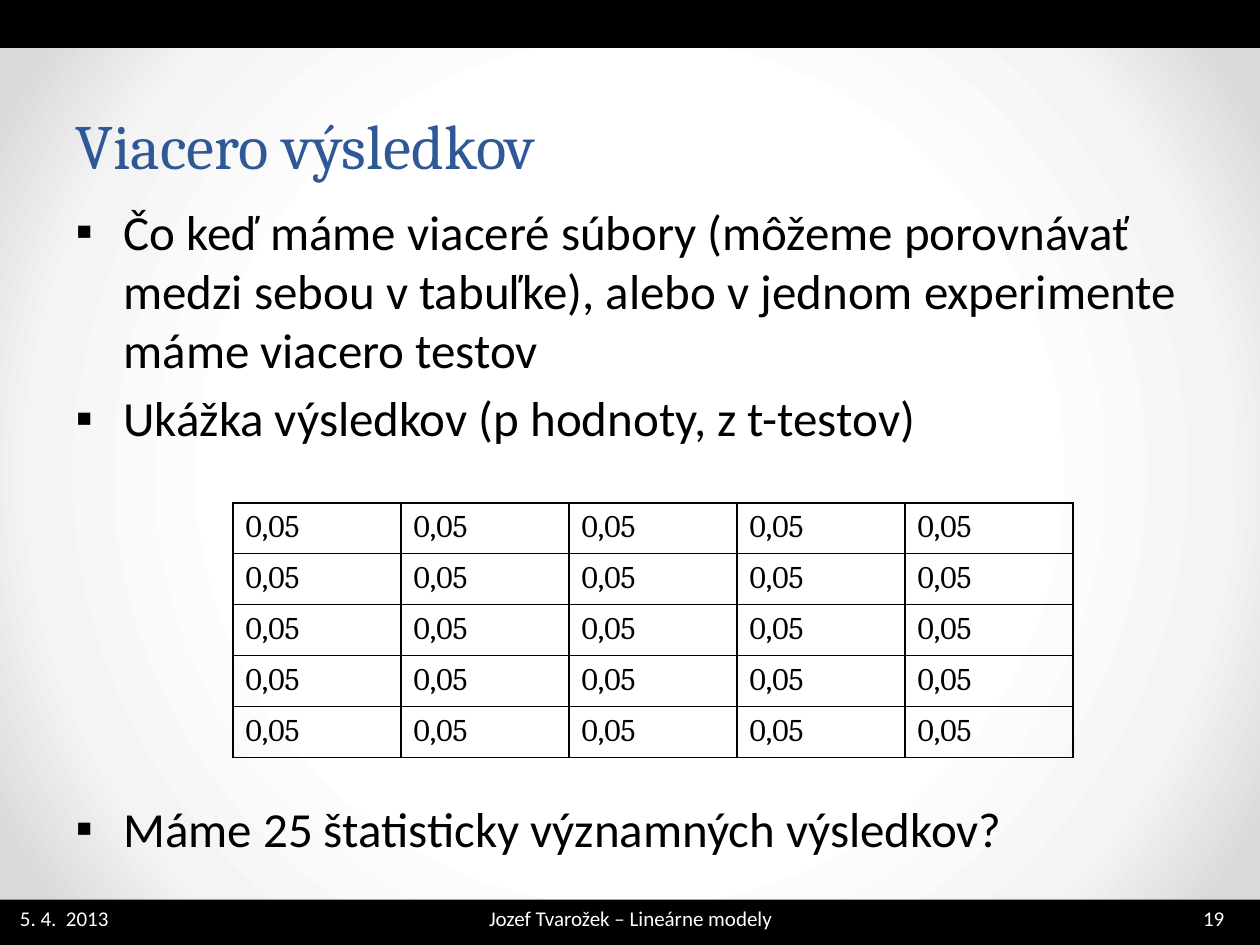
import pptx
import pptx.dml.color
import pptx.enum.text
import pptx.oxml
import pptx.oxml.ns
import pptx.util
from lxml import etree

Inches, Pt = pptx.util.Inches, pptx.util.Pt
ALIGN, ANCHOR = pptx.enum.text.PP_ALIGN, pptx.enum.text.MSO_ANCHOR
qn = pptx.oxml.ns.qn

WIDTH, HEIGHT = 10, 7.5
COLORS = {"black": "000000", "white": "FFFFFF", "title": "2F5897"}
BACKDROP = [(50, "FFFFFF"), (76, "F4F4F4"), (92, "DADADA")]
TITLE = "Viacero výsledkov"
BULLETS = [  # text, space before in points
    ("Čo keď máme viaceré súbory (môžeme porovnávať medzi sebou v tabuľke), "
     "alebo v jednom experimente máme viacero testov", 5.6),
    ("Ukážka výsledkov (p hodnoty, z t-testov)", 5.6),
    ("Máme 25 štatisticky významných výsledkov?", 201),
]
P_VALUES = [["0,05"] * 5 for _ in range(5)]
CELL_WIDTH, CELL_HEIGHT = 4 / 3, 0.405
BAR_HEIGHT, FOOTER_TOP = 0.38, 7.14
FOOTERS = [  # text, left, width, alignment
    ("5. 4.  2013", 0.06, 1.32, ALIGN.LEFT),
    ("Jozef Tvarožek – Lineárne modely", 2.64, 4.73, ALIGN.CENTER),
    ("19", 9.45, 0.55, ALIGN.LEFT),
]


def rgb(name):
    return pptx.dml.color.RGBColor.from_string(COLORS[name])


def place(left, top, width, height):
    return [Inches(value) for value in (left, top, width, height)]


def move(shape, *area):
    shape.left, shape.top, shape.width, shape.height = place(*area)


def add_span(para, text, size, font, color):
    span = para.add_run()
    span.text = text
    span.font.size, span.font.name = Pt(size), font
    span.font.color.rgb = rgb(color)


def paint_background(page):
    """Fill the page with a gradient that spreads from its centre."""
    fill = page.background.fill
    fill.gradient()
    gradient = page.background._cSld.find(".//" + qn("a:gradFill"))
    for child in list(gradient):
        gradient.remove(child)
    stops = etree.SubElement(gradient, qn("a:gsLst"))
    for position, color in BACKDROP:
        stop = etree.SubElement(stops, qn("a:gs"), pos=str(position * 1000))
        etree.SubElement(stop, qn("a:srgbClr"), val=color)
    spread = etree.SubElement(gradient, qn("a:path"), path="circle")
    etree.SubElement(spread, qn("a:fillToRect"), l="50000", t="50000", r="50000", b="50000")


def add_bars(page):
    for top in (FOOTER_TOP, 0):
        bar = page.shapes.add_shape(1, *place(0, top, WIDTH, BAR_HEIGHT))
        bar.shadow.inherit = False
        bar.fill.solid()
        bar.fill.fore_color.rgb = rgb("black")
        bar.line.fill.background()


def add_footers(page):
    for text, left, width, alignment in FOOTERS:
        box = page.shapes.add_textbox(*place(left, FOOTER_TOP, width, 0.3))
        box.text_frame.word_wrap = True
        para = box.text_frame.paragraphs[0]
        para.alignment = alignment
        add_span(para, text, 12, "Calibri", "white")


def write_title(page):
    title = page.shapes.title
    move(title, 0.5, 0.69, 9, 0.7)
    title.text_frame.vertical_anchor = ANCHOR.MIDDLE
    para = title.text_frame.paragraphs[0]
    para.alignment, para.line_spacing = ALIGN.LEFT, Pt(58)
    add_span(para, TITLE, 36, "Cambria", "title")


def write_bullets(page):
    body = page.placeholders[1]
    move(body, 0.5, 1.55, 9, 5.43)
    frame = body.text_frame
    frame.auto_size = pptx.enum.text.MSO_AUTO_SIZE.NONE
    for index, (text, gap) in enumerate(BULLETS):
        para = frame.add_paragraph() if index else frame.paragraphs[0]
        para.space_before = Pt(gap)
        properties = para._p.get_or_add_pPr()
        properties.set("marL", str(Inches(0.38)))
        properties.set("indent", str(Inches(-0.38)))
        etree.SubElement(properties, qn("a:buChar"), char="▪")
        add_span(para, text, 28, "Calibri", "black")


def add_borders(cell):
    properties = cell._tc.get_or_add_tcPr()
    for side in ("a:lnL", "a:lnR", "a:lnT", "a:lnB"):
        line = etree.SubElement(properties, qn(side), w=str(Pt(1)))
        fill = etree.SubElement(line, qn("a:solidFill"))
        etree.SubElement(fill, qn("a:srgbClr"), val=COLORS["black"])


def add_p_values(page):
    rows, columns = len(P_VALUES), len(P_VALUES[0])
    area = place(1.85, 3.99, columns * CELL_WIDTH, rows * CELL_HEIGHT)
    table = page.shapes.add_table(rows, columns, *area).table
    table.first_row = table.horz_banding = False
    for row, values in enumerate(P_VALUES):
        for column, value in enumerate(values):
            cell = table.cell(row, column)
            add_borders(cell)
            cell.fill.background()
            add_span(cell.text_frame.paragraphs[0], value, 18, "Cambria", "black")


def main():
    deck = pptx.Presentation()
    deck.slide_width, deck.slide_height = Inches(WIDTH), Inches(HEIGHT)
    page = deck.slides.add_slide(deck.slide_layouts[1])
    paint_background(page)
    add_bars(page)
    write_title(page)
    write_bullets(page)
    add_footers(page)
    add_p_values(page)
    deck.save("out.pptx")


if __name__ == "__main__":
    main()
